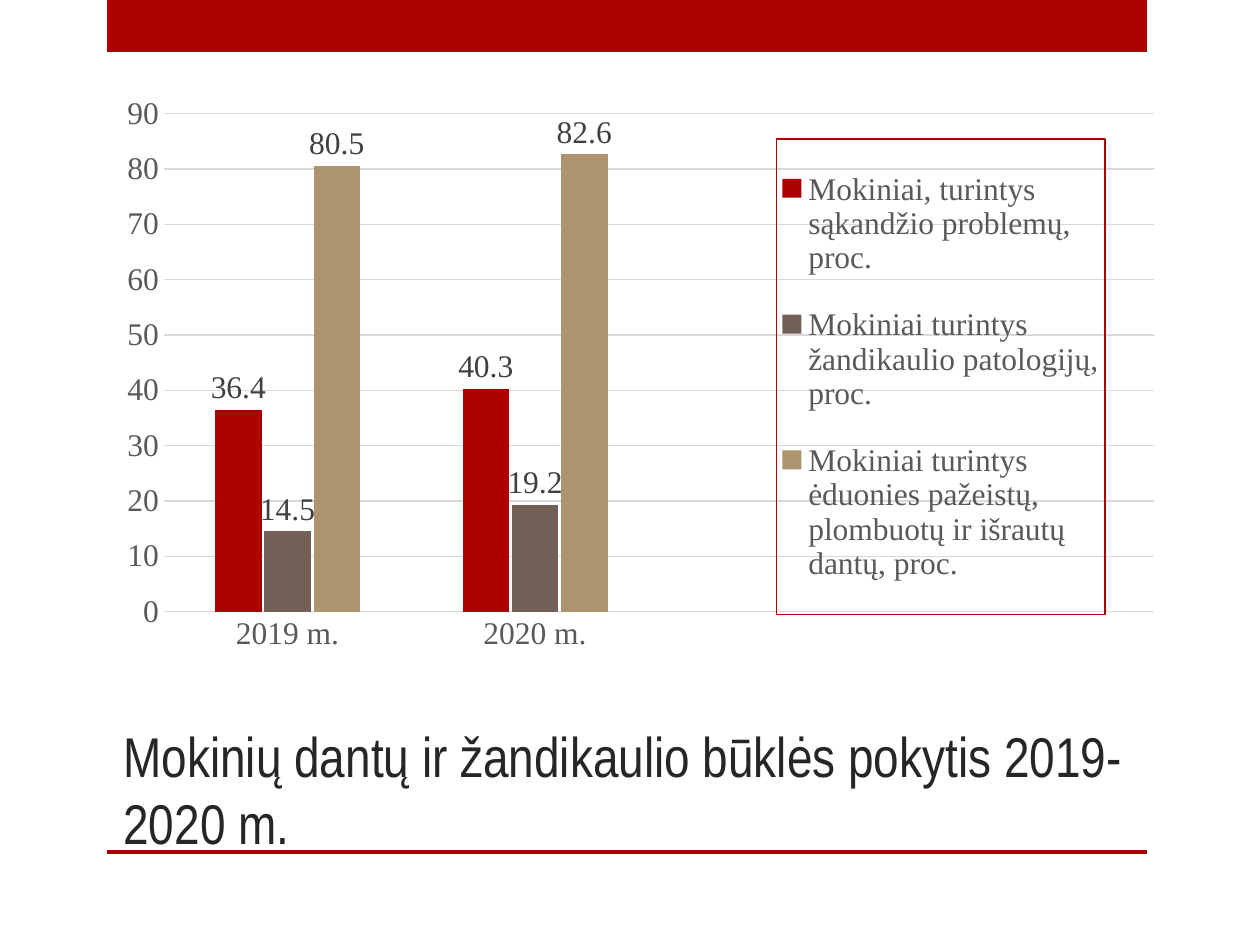
from pptx import Presentation
from pptx.chart.data import CategoryChartData as Data
from pptx.dml.color import RGBColor
from pptx.enum.chart import XL_CHART_TYPE as Kind, XL_LABEL_POSITION as Spot
from pptx.enum.chart import XL_LEGEND_POSITION as Side, XL_TICK_MARK as Tick
from pptx.enum.shapes import MSO_SHAPE as Form
from pptx.enum.text import MSO_ANCHOR as Anchor
from pptx.oxml import parse_xml
from pptx.oxml.ns import nsdecls, qn
from pptx.util import Pt

SCALE = 914400 / 126
RED, BROWN, TAN = "AD0101", "726056", "AC956E"
INK, GREY, DARK, PALE = "262626", "595959", "404040", "D9D9D9"
YEARS = ["2019 m.", "2020 m.", "", ""]
SERIES = [
    ("Mokiniai, turintys sąkandžio problemų, proc.", RED, (36.4, 40.3)),
    ("Mokiniai turintys žandikaulio patologijų, proc.", BROWN, (14.5, 19.2)),
    ("Mokiniai turintys ėduonies pažeistų, plombuotų ir išrautų dantų, proc.",
     TAN, (80.5, 82.6)),
]


def px(*nums):
    """Turn pixel lengths into EMU."""
    return [round(n * SCALE) for n in nums]


def tint(code):
    """Turn a hex string into a colour."""
    return RGBColor.from_string(code)


def place(parent, index, frame, inner=""):
    """Fix a chart part at x, y, w, h given as shares of the chart."""
    for old in parent.findall(qn("c:layout")):
        parent.remove(old)
    sizes = "".join(f'<c:{k} val="{v}"/>' for k, v in zip("xywh", frame))
    parent.insert(index, parse_xml(
        f'<c:layout {nsdecls("c")}><c:manualLayout>{inner}'
        f'<c:xMode val="edge"/><c:yMode val="edge"/>{sizes}'
        "</c:manualLayout></c:layout>"))


class Deck:
    """Hold the style and the current slide."""

    def __init__(self, wide, high, head, body):
        """Start a deck with one blank slide."""
        self.show = Presentation()
        self.show.slide_width, self.show.slide_height = px(wide, high)
        self.slide = self.show.slides.add_slide(self.show.slide_layouts[6])
        self.head, self.body = head, body

    def font(self, font, name, size, code):
        """Set face, size and colour of a font."""
        font.name, font.size, font.color.rgb = name, Pt(size), tint(code)

    def bar(self, *box):
        """Draw a plain red bar."""
        bar = self.slide.shapes.add_shape(Form.RECTANGLE, *px(*box))
        bar.shadow.inherit = False
        bar.fill.solid()
        bar.fill.fore_color.rgb = tint(RED)
        bar.line.fill.background()

    def title(self, text, *box):
        """Write the title on the floor of its box."""
        frame = self.slide.shapes.add_textbox(*px(*box)).text_frame
        frame.word_wrap = True
        frame.vertical_anchor = Anchor.BOTTOM
        run = frame.paragraphs[0].add_run()
        run.text = text
        self.font(run.font, self.head, 32, INK)

    def chart(self, cats, rows, *box):
        """Add the clustered columns."""
        data = Data()
        data.categories = cats
        for name, _, vals in rows:
            data.add_series(name, vals + (None,) * (len(cats) - len(vals)))
        chart = self.slide.shapes.add_chart(
            Kind.COLUMN_CLUSTERED, *px(*box), data).chart
        chart.has_title = False
        self.font(chart.font, self.body, 18, GREY)
        plot = chart.plots[0]
        plot.gap_width, plot.overlap = 221, -6
        plot.vary_by_categories = False
        for series, (_, code, _) in zip(plot.series, rows):
            self.series(series, code)
        self.axes(chart)
        self.legend(chart)
        place(chart._chartSpace.chart.plotArea, 0, (0.047, 0.031, 0.952, 0.879),
              '<c:layoutTarget val="inner"/>')

    def series(self, series, code):
        """Colour one series and label its values."""
        series.format.fill.solid()
        series.format.fill.fore_color.rgb = tint(code)
        series.invert_if_negative = False
        labels = series.data_labels
        labels.show_value = True
        labels.position = Spot.OUTSIDE_END
        self.font(labels.font, self.body, 18, DARK)

    def axes(self, chart):
        """Style both axes and the grid."""
        cat, val = chart.category_axis, chart.value_axis
        for axis in (cat, val):
            axis.major_tick_mark = axis.minor_tick_mark = Tick.NONE
            self.font(axis.tick_labels.font, self.body, 18, GREY)
        val.minimum_scale, val.maximum_scale, val.major_unit = 0, 90, 10
        val.format.line.fill.background()
        for line in (cat.format.line, val.major_gridlines.format.line):
            line.color.rgb, line.width = tint(PALE), Pt(0.75)

    def legend(self, chart):
        """Lay a framed legend over the empty half of the plot."""
        chart.has_legend = True
        legend = chart.legend
        legend.position = Side.BOTTOM
        legend.include_in_layout = False
        self.font(legend.font, self.body, 18, GREY)
        root = legend._element
        place(root, 1, (0.636, 0.076, 0.316, 0.838))
        root.find(qn("c:overlay")).addnext(parse_xml(
            f'<c:spPr {nsdecls("c", "a")}><a:noFill/><a:ln w="9525"><a:solidFill>'
            f'<a:srgbClr val="{RED}"/></a:solidFill></a:ln></c:spPr>'))


def main():
    """Build the slide and save it."""
    deck = Deck(1260, 945, "Arial Narrow", "Times New Roman")
    deck.bar(107, 0, 1040, 52)
    deck.bar(107, 850, 1040, 4)
    deck.title("Mokinių dantų ir žandikaulio būklės pokytis 2019-2020 m.",
               111, 641, 1040, 221)
    deck.chart(YEARS, SERIES, 115, 96, 1040, 567)
    deck.show.save("out.pptx")


if __name__ == "__main__":
    main()
